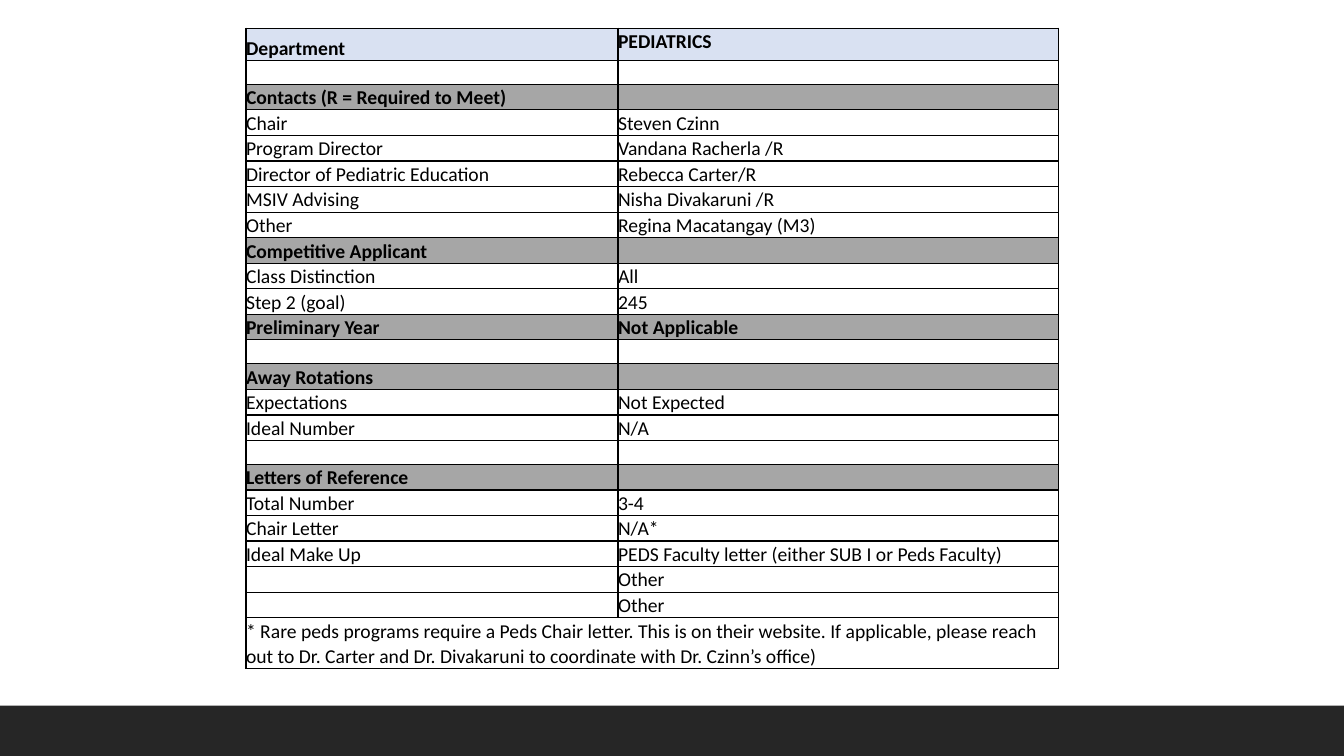
from lxml.etree import SubElement
from pptx import Presentation
from pptx.dml.color import RGBColor
from pptx.enum.shapes import MSO_SHAPE as Shape
from pptx.enum.text import MSO_ANCHOR as Anchor
from pptx.oxml import parse_xml
from pptx.oxml.ns import nsdecls, qn
from pptx.util import Inches, Pt

# Content: (style, left cell, right cell)
ROWS = [
    ("header", "Department", "PEDIATRICS"),
    ("plain", "", ""),
    ("section", "Contacts (R = Required to Meet)", ""),
    ("plain", "Chair", "Steven Czinn"),
    ("plain", "Program Director", "Vandana Racherla /R"),
    ("plain", "Director of Pediatric Education", "Rebecca Carter/R"),
    ("plain", "MSIV Advising", "Nisha Divakaruni /R"),
    ("plain", "Other", "Regina Macatangay (M3)"),
    ("section", "Competitive Applicant", ""),
    ("plain", "Class Distinction", "All"),
    ("plain", "Step 2 (goal)", "245"),
    ("section", "Preliminary Year", "Not Applicable"),
    ("plain", "", ""),
    ("section", "Away Rotations", ""),
    ("plain", "Expectations", "Not Expected"),
    ("plain", "Ideal Number", "N/A"),
    ("plain", "", ""),
    ("section", "Letters of Reference", ""),
    ("plain", "Total Number", "3-4"),
    ("plain", "Chair Letter", "N/A*"),
    ("plain", "Ideal Make Up", "PEDS Faculty letter (either SUB I or Peds Faculty)"),
    ("plain", "", "Other"),
    ("plain", "", "Other"),
    ("note", "* Rare peds programs require a Peds Chair letter. This is on their "
             "website. If applicable, please reach out to Dr. Carter and "
             "Dr. Divakaruni to coordinate with Dr. Czinn’s office)", ""),
]
FILLS = {"header": "D9E1F2", "section": "A6A6A6"}
HEIGHTS = {"header": 0.32, "note": 0.43}
ROW_HEIGHT = 0.23
COLUMN_WIDTHS = (3.69, 4.37)
FONT, SIZE = "Calibri", 14


def color(value):
    return RGBColor.from_string(value)


def add_borders(cell):
    properties = cell._tc.get_or_add_tcPr()
    for position, side in enumerate(("lnL", "lnR", "lnT", "lnB")):
        properties.insert(position, parse_xml(
            f'<a:{side} {nsdecls("a")} w="{Pt(1)}"><a:solidFill>'
            f'<a:srgbClr val="000000"/></a:solidFill></a:{side}>'))


def fill_cell(cell, text, style, anchor):
    cell.margin_left = cell.margin_right = cell.margin_top = cell.margin_bottom = 0
    cell.vertical_anchor = anchor
    if style in FILLS:
        cell.fill.solid()
        cell.fill.fore_color.rgb = color(FILLS[style])
    else:
        cell.fill.background()
    add_borders(cell)
    cell.text_frame.text = text
    paragraph = cell.text_frame.paragraphs[0]
    paragraph.line_spacing = 1.07
    for run in paragraph.runs:
        run.font.name = FONT
        run.font.size = Pt(SIZE)
        run.font.bold = style in FILLS
        run.font.color.rgb = color("000000")
    if not text:  # keeps empty cells as low as the others
        end = SubElement(paragraph._p, qn("a:endParaRPr"), sz=str(SIZE * 100))
        SubElement(end, qn("a:latin"), typeface=FONT)


presentation = Presentation()
presentation.slide_width = Inches(13.33)
presentation.slide_height = Inches(7.5)
slide = presentation.slides.add_slide(presentation.slide_layouts[6])

# Footer band
band = slide.shapes.add_shape(Shape.RECTANGLE, 0, Inches(7), Inches(13.33), Inches(0.5))
band.shadow.inherit = False
band.fill.solid()
band.fill.fore_color.rgb = color("262626")
band.line.fill.background()

# Department table
heights = [HEIGHTS.get(style, ROW_HEIGHT) for style, _, _ in ROWS]
table = slide.shapes.add_table(
    len(ROWS), len(COLUMN_WIDTHS), Inches(2.44), Inches(0.28),
    Inches(sum(COLUMN_WIDTHS)), Inches(sum(heights))).table
table.first_row = table.horz_banding = False
for column, width in zip(table.columns, COLUMN_WIDTHS):
    column.width = Inches(width)

for index, (style, left, right) in enumerate(ROWS):
    table.rows[index].height = Inches(heights[index])
    label, value = table.cell(index, 0), table.cell(index, 1)
    fill_cell(label, left, style, Anchor.BOTTOM)
    fill_cell(value, right, style, Anchor.MIDDLE if style == "plain" else Anchor.TOP)
    if style == "note":
        label.merge(value)

presentation.save("out.pptx")
